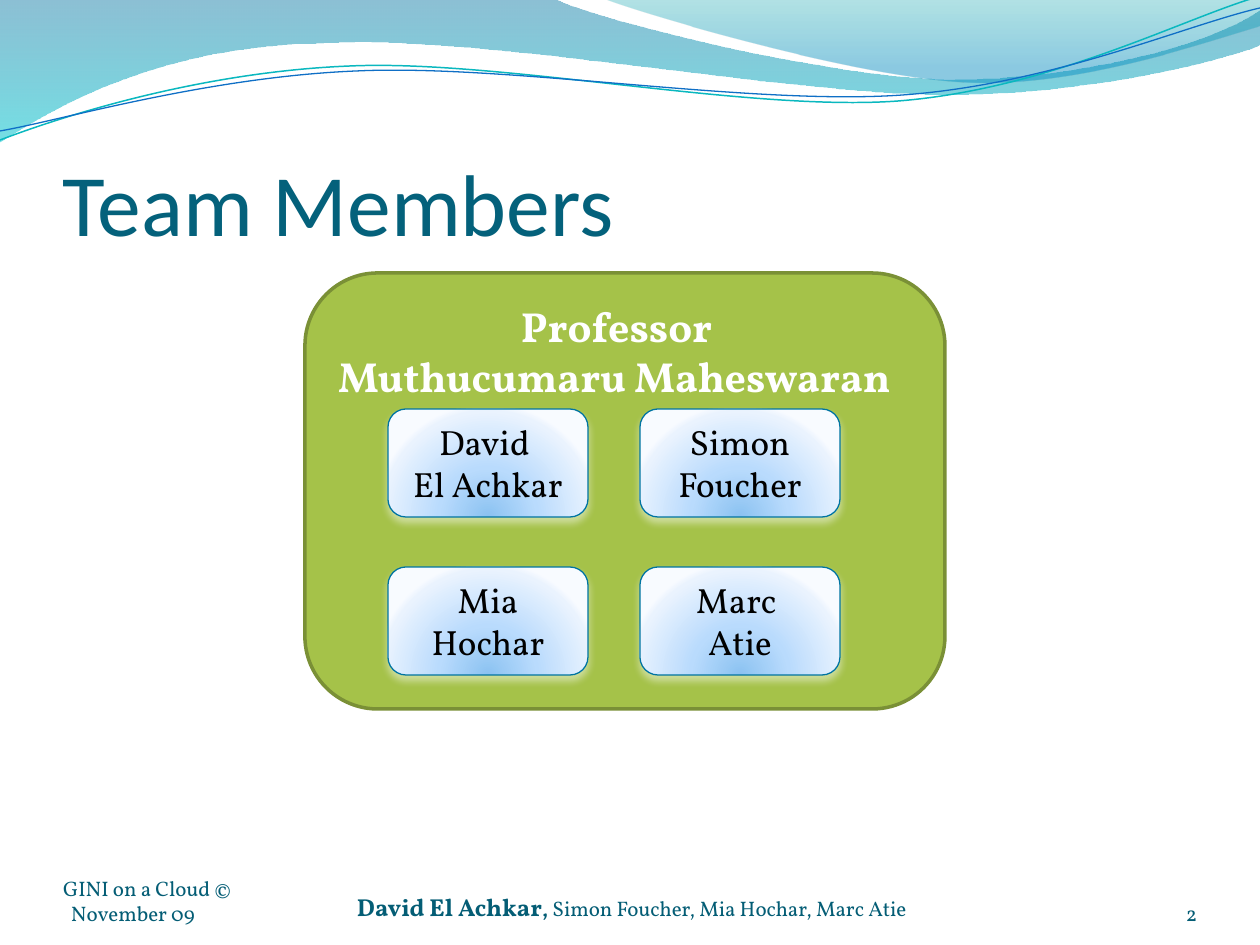
from lxml import etree
from pptx import Presentation
from pptx.dml.color import RGBColor
from pptx.enum.shapes import MSO_SHAPE
from pptx.enum.text import MSO_ANCHOR, PP_ALIGN
from pptx.oxml import parse_xml
from pptx.oxml.ns import nsdecls, qn
from pptx.util import Emu, Pt

ROUNDED = MSO_SHAPE.ROUNDED_RECTANGLE
TOP, MIDDLE, BOTTOM = MSO_ANCHOR.TOP, MSO_ANCHOR.MIDDLE, MSO_ANCHOR.BOTTOM
LEFT, CENTER, RIGHT = PP_ALIGN.LEFT, PP_ALIGN.CENTER, PP_ALIGN.RIGHT
EMU_PER_PX = 914400 / 126

THEME = {
    "title": {"name": "Calibri", "size": 50, "color": "04617B"},
    "professor": {"name": "Vollkorn", "size": 24, "color": "FFFFFF", "bold": True},
    "member": {"name": "Vollkorn", "size": 20, "color": "000000"},
    "footer": {"name": "Vollkorn", "size": 12, "color": "045D75"},
    "footer_bold": {"name": "Vollkorn", "size": 12, "color": "045D75", "bold": True},
    "presenter": {"name": "Vollkorn", "size": 14, "color": "045D75", "bold": True},
    "panel": ("A5C249", "7A9036", 2),
    "card_line": ("0074A1", 0.75),
    "card_shadow": ("FFFFFF", 48),
    "card_stops": [(0, "8BC2F1", 100), (43, "B9DBFD", 100),
                   (93, "EAF3FE", 100), (100, "F8FBFF", 100)],
    "wave_stops": [(0, "0074A1", 45), (100, "00C6CF", 55)],
    "crest_stops": [(0, "00A1A9", 30), (80, "008BBF", 45)],
    "teal_line": ("0AB8BF", 0.85),
    "blue_line": ("0F6FC6", 0.75),
}
DOWNWARD = '<a:lin ang="5400000" scaled="0"/>'
FROM_BELOW = ('<a:path path="circle"><a:fillToRect l="50000" t="130000" '
              'r="50000" b="-30000"/></a:path>')

WAVE = [[(0, 0)], [(554, -1)],
        [(600, 21), (837, 79), (955, 79)], [(1074, 79), (1207, 47), (1260, 11)],
        [(1261, 45)],
        [(1239, 55), (1096, 96), (940, 94)], [(784, 94), (481, 35), (324, 43)],
        [(163, 45), (58, 105), (-1, 142)]]
CREST = [[(604, -1)], [(641, 14), (859, 78), (969, 82)],
         [(1079, 87), (1211, 40), (1260, 26)], [(1260, 0)]]
TEAL_CURVE = [[(0, 140)], [(60, 117), (199, 72), (349, 66)],
              [(498, 59), (747, 112), (898, 101)],
              [(1050, 89), (1182, 19), (1257, -3)]]
BLUE_CURVE = [[(0, 131)], [(59, 121), (207, 77), (357, 71)],
              [(508, 64), (752, 106), (903, 95)],
              [(1053, 84), (1183, 26), (1260, 8)]]

MEMBERS = [[["David ", "El Achkar"], ["Simon Foucher"]],
           [["Mia Hochar"], ["Marc ", "Atie"]]]


def px(value):
    return Emu(round(value * EMU_PER_PX))


def set_values(target, values):
    for key, value in values.items():
        setattr(target, key, value)


def set_line(shape, color, width):
    shape.line.color.rgb = RGBColor.from_string(color)
    shape.line.width = Pt(width)


def color_xml(color, alpha):
    opacity = f'<a:alpha val="{alpha * 1000}"/>' if alpha < 100 else ""
    return f'<a:srgbClr val="{color}">{opacity}</a:srgbClr>'


def set_gradient(shape, stops, direction):
    shape.fill.gradient()
    old_fill = shape._element.spPr.find(qn("a:gradFill"))
    stop_xml = "".join(f'<a:gs pos="{pos * 1000}">{color_xml(color, alpha)}</a:gs>'
                       for pos, color, alpha in stops)
    new_fill = parse_xml(f'<a:gradFill {nsdecls("a")} rotWithShape="1">'
                         f'<a:gsLst>{stop_xml}</a:gsLst>{direction}</a:gradFill>')
    old_fill.getparent().replace(old_fill, new_fill)


def add_soft_shadow(shape):
    shape._element.spPr.find(qn("a:effectLst")).append(parse_xml(
        f'<a:outerShdw {nsdecls("a")} blurRad="{Pt(4.5)}" dist="{Pt(3)}" '
        f'dir="5400000" rotWithShape="0">{color_xml(*THEME["card_shadow"])}'
        '</a:outerShdw>'))


def write(shape, paragraphs, anchor, insets=(0, 0, 0, 0)):
    frame = shape.text_frame
    sides = ("margin_left", "margin_top", "margin_right", "margin_bottom")
    set_values(frame, {"word_wrap": True, "vertical_anchor": anchor,
                       **dict(zip(sides, map(px, insets)))})
    for index, (alignment, runs) in enumerate(paragraphs):
        paragraph = frame.add_paragraph() if index else frame.paragraphs[0]
        paragraph.alignment = alignment
        for text, style in runs:
            run = paragraph.add_run()
            run.text = text
            values = dict(THEME[style])
            run.font.color.rgb = RGBColor.from_string(values.pop("color"))
            set_values(run.font, {**values, "size": Pt(values["size"])})
    return frame


def add_text(slide, box, paragraphs, insets=(0, 0, 0, 0)):
    return write(slide.shapes.add_textbox(*map(px, box)), paragraphs, BOTTOM, insets)


def add_curve(slide, box, outline, closed):
    left, top = box[:2]
    start, *segments = [[(px(left + x), px(top + y)) for x, y in part]
                        for part in outline]
    builder = slide.shapes.build_freeform(*start[0])
    builder.add_line_segments([segment[-1] for segment in segments], close=closed)
    curve = builder.convert_to_shape()
    curve.shadow.inherit = False
    straight_parts = list(curve._element.iter(qn("a:lnTo")))
    for straight, segment in zip(straight_parts, segments):
        if len(segment) == 3:
            bend = etree.Element(qn("a:cubicBezTo"))
            for x, y in segment:
                etree.SubElement(bend, qn("a:pt"), x=str(x - curve.left),
                                 y=str(y - curve.top))
            straight.getparent().replace(straight, bend)
    return curve


def add_waves(slide, box):
    for outline, stops in ((WAVE, "wave_stops"), (CREST, "crest_stops")):
        wave = add_curve(slide, box, outline, True)
        set_gradient(wave, THEME[stops], DOWNWARD)
        wave.line.fill.background()
    for outline, line in ((TEAL_CURVE, "teal_line"), (BLUE_CURVE, "blue_line")):
        strand = add_curve(slide, box, outline, False)
        strand.fill.background()
        set_line(strand, *THEME[line])


def add_panel(slide, box):
    panel = slide.shapes.add_shape(ROUNDED, *map(px, box))
    panel.shadow.inherit = False
    fill, *line = THEME["panel"]
    panel.fill.solid()
    panel.fill.fore_color.rgb = RGBColor.from_string(fill)
    set_line(panel, *line)
    write(panel, [(CENTER, [("Professor", "professor")]),
                  (LEFT, [("Muthucumaru Maheswaran", "professor")])],
          TOP, (12, 6, 29, 6))


def add_member_card(slide, box, lines):
    card = slide.shapes.add_shape(ROUNDED, *map(px, box))
    card.shadow.inherit = False
    set_gradient(card, THEME["card_stops"], FROM_BELOW)
    set_line(card, *THEME["card_line"])
    add_soft_shadow(card)
    write(card, [(CENTER, [(line, "member")]) for line in lines], MIDDLE, (12, 6, 12, 6))


def add_members(slide, box):
    left, top, width, height = box
    card_width, card_height = 200, 108
    for row, names in enumerate(MEMBERS):
        for column, lines in enumerate(names):
            add_member_card(slide, (left + column * (width - card_width),
                                    top + row * (height - card_height),
                                    card_width, card_height), lines)


def add_footer(slide, box):
    left, top, width, height = box
    event = add_text(slide, (left, top, 294, height),
                     [(LEFT, [("GINI on a Cloud © November 09", "footer")])],
                     (0, 0, 50, 0))
    set_hanging = event.paragraphs[0]._p.get_or_add_pPr().set
    set_hanging("marL", str(px(8)))
    set_hanging("indent", str(-px(8)))
    add_text(slide, (left + width - 105, top, 105, height), [(RIGHT, [("2", "footer")])])
    add_text(slide, (left + 294, top + 5, 557, 40),
             [(LEFT, [("David El Achkar", "presenter"), (", ", "footer_bold"),
                      ("Simon Foucher, Mia Hochar, Marc Atie", "footer")])])


def main():
    deck = Presentation()
    set_values(deck, {"slide_width": px(1260), "slide_height": px(945)})
    slide = deck.slides.add_slide(deck.slide_layouts[6])
    add_waves(slide, (0, 0, 1260, 142))
    add_panel(slide, (305, 273, 640, 436))
    add_text(slide, (63, 97, 1134, 157), [(LEFT, [("Team Members", "title")])], (0, 6, 0, 0))
    add_members(slide, (388, 409, 452, 266))
    add_footer(slide, (63, 876, 1134, 50))
    deck.save("out.pptx")


if __name__ == "__main__":
    main()
